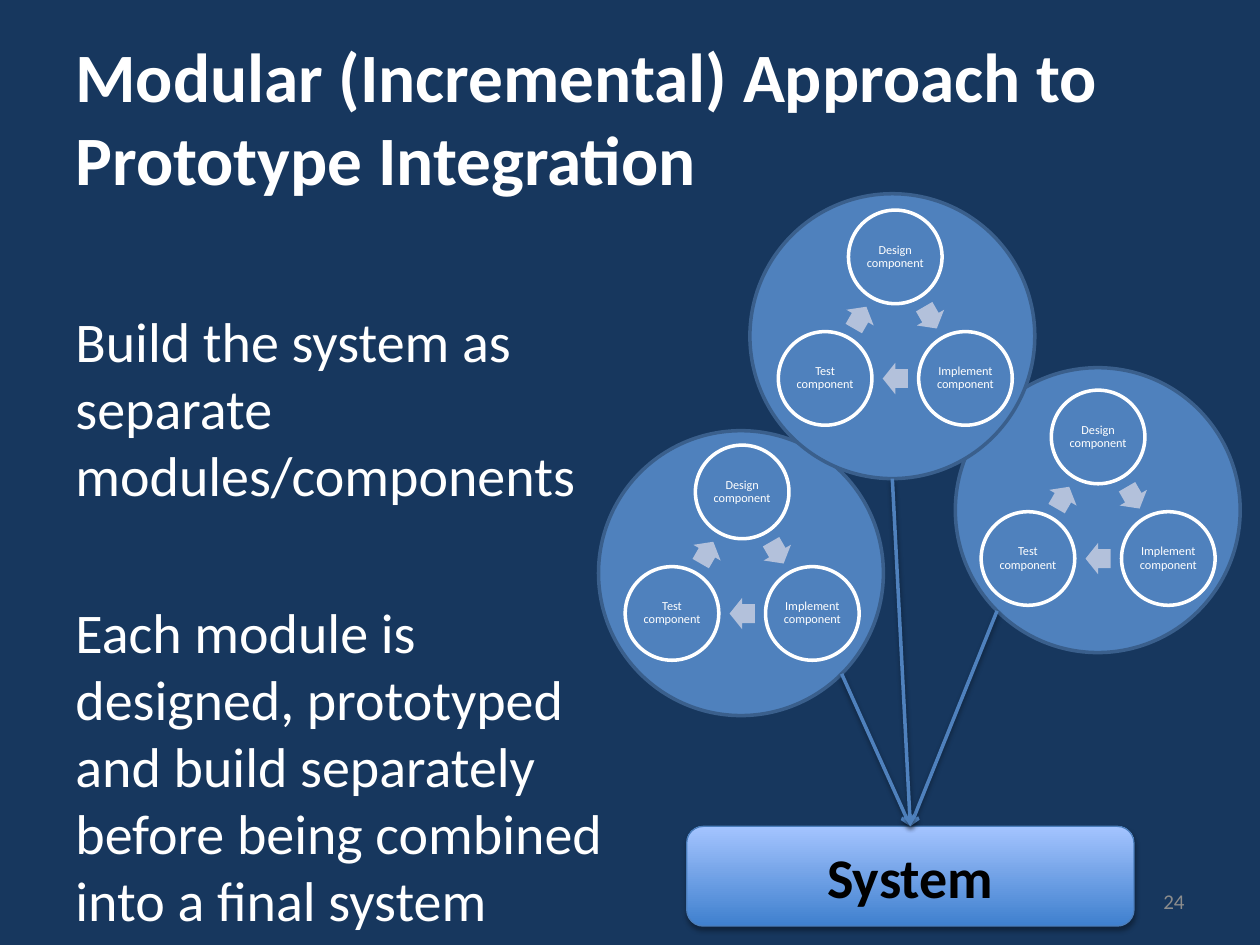
import math

import pptx
import pptx.dml.color
import pptx.enum.shapes
import pptx.enum.text
import pptx.oxml
import pptx.oxml.ns
import pptx.util

Pt = pptx.util.Pt
Shape = pptx.enum.shapes.MSO_SHAPE
Align = pptx.enum.text.PP_ALIGN
Anchor = pptx.enum.text.MSO_ANCHOR

NAVY, BLUE, RIM = "17375E", "4F81BD", "3A5F8C"
PALE, WHITE, BLACK, GREY = "B3C1DB", "FFFFFF", "000000", "8C8C8C"


def color(value):
    return pptx.dml.color.RGBColor.from_string(value)


class SlideBuilder:
    font = "Calibri"
    line_width = 2

    def __init__(self, page):
        self.page = page

    def fill_text(self, shape, paragraphs, size, ink=WHITE, bold=False, align=Align.LEFT,
                  anchor=Anchor.MIDDLE, gap=0, spacing=None):
        frame = shape.text_frame
        frame.word_wrap = True
        frame.vertical_anchor = anchor
        for index, text in enumerate(paragraphs):
            para = frame.add_paragraph() if index else frame.paragraphs[0]
            para.text = text
            para.alignment = align
            para.space_before = Pt(gap if index else 0)
            if spacing:
                para.line_spacing = spacing
            para.font.name = self.font
            para.font.size = Pt(size)
            para.font.bold = bold
            para.font.color.rgb = color(ink)
        return frame

    def text(self, left, top, width, height, paragraphs, size, **style):
        box = self.page.shapes.add_textbox(Pt(left), Pt(top), Pt(width), Pt(height))
        return self.fill_text(box, paragraphs, size, **style)

    def shape(self, kind, left, top, width, height, fill=None, line=None, parent=None):
        shapes = (parent or self.page).shapes
        shape = shapes.add_shape(kind, Pt(left), Pt(top), Pt(width), Pt(height))
        shape.shadow.inherit = False
        if fill:
            shape.fill.solid()
            shape.fill.fore_color.rgb = color(fill)
        if line:
            shape.line.color.rgb = color(line)
            shape.line.width = Pt(self.line_width)
        else:
            shape.line.fill.background()
        return shape

    def shadow(self, shape, opacity, distance):
        properties = shape._element.spPr
        for old in properties.findall(pptx.oxml.ns.qn("a:effectLst")):
            properties.remove(old)
        properties.append(pptx.oxml.parse_xml(
            f'<a:effectLst {pptx.oxml.ns.nsdecls("a")}>'
            f'<a:outerShdw blurRad="{Pt(3.1)}" dist="{Pt(distance)}" dir="5400000" rotWithShape="0">'
            f'<a:srgbClr val="{BLACK}"><a:alpha val="{opacity * 1000}"/></a:srgbClr>'
            '</a:outerShdw></a:effectLst>'))

    def cycle(self, center_x, center_y, steps):
        """Ring of round steps with an arrow halfway between neighbours."""
        size, ring, arrow_ring = 53.5, 46.3, 23.2
        arrow_width, arrow_height = 14.4, 18
        turn = 360 / len(steps)
        group = self.page.shapes.add_group_shape()
        for index, step in enumerate(steps):
            angle = index * turn - 90
            x, y = around(center_x, center_y, ring, angle)
            circle = self.shape(Shape.OVAL, x - size / 2, y - size / 2, size, size,
                                BLUE, WHITE, group)
            frame = self.fill_text(circle, [step], 7, align=Align.CENTER, spacing=0.9)
            frame.margin_left = frame.margin_right = Pt(0.7)
            frame.margin_top = frame.margin_bottom = Pt(0.7)

            angle += turn / 2
            x, y = around(center_x, center_y, arrow_ring, angle)
            arrow = self.shape(Shape.RIGHT_ARROW, x - arrow_width / 2, y - arrow_height / 2,
                               arrow_width, arrow_height, PALE, parent=group)
            arrow.adjustments[0] = 0.6
            arrow.rotation = angle + 90

    def arrow(self, start_x, start_y, target):
        line = self.page.shapes.add_connector(
            pptx.enum.shapes.MSO_CONNECTOR.STRAIGHT, Pt(start_x), Pt(start_y),
            target.left + target.width // 2, target.top)
        line.end_connect(target, 0)
        line.line.color.rgb = color(BLUE)
        line.line.width = Pt(self.line_width)
        line.get_or_add_ln().append(pptx.oxml.parse_xml(
            f'<a:tailEnd {pptx.oxml.ns.nsdecls("a")} type="arrow"/>'))
        self.shadow(line, 38, 1.6)


def around(x, y, radius, degrees):
    angle = math.radians(degrees)
    return x + radius * math.cos(angle), y + radius * math.sin(angle)


def main():
    deck = pptx.Presentation()
    deck.slide_width, deck.slide_height = Pt(720), Pt(540)
    page = deck.slides.add_slide(deck.slide_layouts[6])
    page.background.fill.solid()
    page.background.fill.fore_color.rgb = color(NAVY)
    builder = SlideBuilder(page)

    # Modules: disc corner, cycle centre, degrees where the arrow leaves the disc
    disc = 162.8
    modules = [
        ((342, 246.1), (424.1, 327.4), 45),
        ((545.9, 210.1), (627.5, 296), 135),
        ((428.5, 110.7), (511.6, 193.1), 90),
    ]
    for (left, top), _, _ in modules:
        builder.shape(Shape.OVAL, left, top, disc, disc, BLUE, RIM)

    # Title and body
    builder.text(36, 21.6, 648, 90,
                 ["Modular (Incremental) Approach to Prototype Integration"], 39.6, bold=True)
    body = builder.text(36, 126, 327.6, 403.2, [
        "Build the system as separate modules/components",
        "Each module is designed, prototyped and build separately "
        "before being combined into a final system",
    ], 32, anchor=Anchor.TOP, gap=51)
    body.margin_top = Pt(49)

    # Slide number
    builder.text(516, 500.5, 168, 28.8, ["24"], 12, ink=GREY, align=Align.RIGHT)

    # System
    system = builder.shape(Shape.ROUNDED_RECTANGLE, 392.4, 472.2, 255.6, 57, line="4B7EBC")
    system.line.width = Pt(0.75)
    system.fill.gradient()
    system.fill.gradient_angle = 90
    for stop, shade in zip(system.fill.gradient_stops, ("3F80CE", "A4C4FF")):
        stop.color.rgb = color(shade)
    builder.shadow(system, 35, 1.8)
    builder.fill_text(system, ["System"], 32, ink=BLACK, bold=True, align=Align.CENTER)

    # Cycles and arrows to the system
    steps = ["Design component", "Implement component", "Test component"]
    for (left, top), center, degrees in modules:
        builder.cycle(*center, steps)
        builder.arrow(*around(left + disc / 2, top + disc / 2, disc / 2, degrees), system)

    deck.save("out.pptx")


if __name__ == "__main__":
    main()
